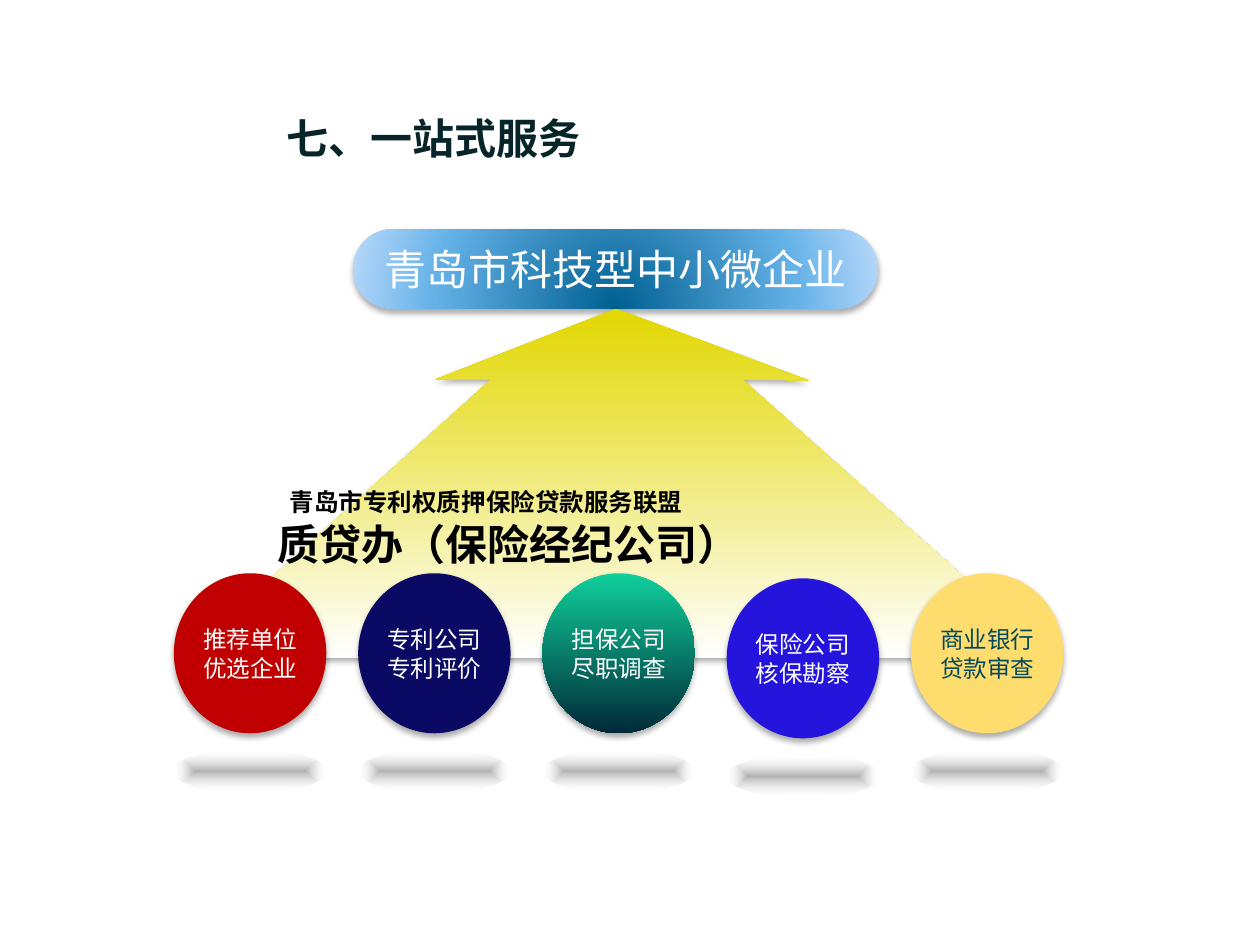
from lxml import etree
from pptx import Presentation
from pptx.dml.color import RGBColor
from pptx.enum.shapes import MSO_SHAPE
from pptx.enum.text import MSO_ANCHOR, PP_ALIGN
from pptx.oxml import parse_xml
from pptx.oxml.ns import nsdecls, qn
from pptx.util import Inches, Pt

ELLIPSE, PILL = MSO_SHAPE.OVAL, MSO_SHAPE.ROUNDED_RECTANGLE
MIDDLE, TOP = MSO_ANCHOR.MIDDLE, MSO_ANCHOR.TOP
CENTER, LEFT = PP_ALIGN.CENTER, PP_ALIGN.LEFT
COLS, ROWS = 100, 75  # slide grid
DOWN = '<a:lin ang="5400000" scaled="0"/>'


def rgb(hex_code):
    return RGBColor.from_string(hex_code)


def focus(kind, l, t, r, b):
    """Gradient that runs towards a focus rectangle, given in percent."""
    sides = zip("ltrb", (l, t, r, b))
    rect = " ".join(f'{k}="{v * 1000}"' for k, v in sides)
    return f'<a:path path="{kind}"><a:fillToRect {rect}/></a:path>'


class Deck:
    font = "Noto Sans CJK SC"

    def __init__(self, width, height):
        self.prs = Presentation()
        self.prs.slide_width, self.prs.slide_height = Inches(width), Inches(height)
        self.s = self.prs.slides.add_slide(self.prs.slide_layouts[5])

    def x(self, cols):
        return round(self.prs.slide_width * cols / COLS)

    def y(self, rows):
        return round(self.prs.slide_height * rows / ROWS)

    def box(self, at):
        left, top, width, height = at
        return self.x(left), self.y(top), self.x(width), self.y(height)

    def paint(self, sp, fill, shadow=True):
        """Fill is a hex string or a pair: stops (percent, colour, alpha), direction."""
        sp.line.fill.background()
        sp.shadow.inherit = False
        if isinstance(fill, str):
            sp.fill.solid()
            sp.fill.fore_color.rgb = rgb(fill)
        else:
            stops, direction = fill
            gs = "".join(
                f'<a:gs pos="{pos * 1000}"><a:srgbClr val="{color}">'
                f'<a:alpha val="{alpha * 1000}"/></a:srgbClr></a:gs>'
                for pos, color, alpha in stops)
            sp.fill.background()
            no_fill = sp._element.spPr.find(qn("a:noFill"))
            no_fill.getparent().replace(no_fill, parse_xml(
                f'<a:gradFill {nsdecls("a")} rotWithShape="1">'
                f"<a:gsLst>{gs}</a:gsLst>{direction}</a:gradFill>"))
        if shadow:
            effects = sp._element.spPr.find(qn("a:effectLst"))
            effects.append(parse_xml(
                f'<a:outerShdw {nsdecls("a")} blurRad="{Pt(3.5)}" dist="{Pt(2.2)}" '
                'dir="5400000" rotWithShape="0"><a:srgbClr val="000000">'
                '<a:alpha val="32000"/></a:srgbClr></a:outerShdw>'))

    def add_lines(self, sp, lines, color, bold=False, align=CENTER, anchor=MIDDLE):
        """Lines are (text, size, line spacing or None, indent in columns)."""
        tf = sp.text_frame
        tf.word_wrap = False
        tf.vertical_anchor = anchor
        tf.margin_left = tf.margin_right = tf.margin_top = tf.margin_bottom = 0
        for i, (text, size, spacing, indent) in enumerate(lines):
            p = tf.add_paragraph() if i else tf.paragraphs[0]
            p.alignment = align
            if spacing:
                p.line_spacing = Pt(spacing)
            if indent:
                p._p.get_or_add_pPr().set("marL", str(self.x(indent)))
            r = p.add_run()
            r.text = text
            r.font.name, r.font.size, r.font.bold = self.font, Pt(size), bold
            r.font.color.rgb = rgb(color)
            etree.SubElement(r._r.rPr, qn("a:ea")).set("typeface", self.font)

    def title(self, at, text, size, color):
        sp = self.s.shapes.title
        sp.left, sp.top, sp.width, sp.height = self.box(at)
        self.add_lines(sp, [(text, size, None, 0)], color, bold=True)

    def shape(self, kind, at, fill, shadow=True):
        sp = self.s.shapes.add_shape(kind, *self.box(at))
        self.paint(sp, fill, shadow)
        return sp

    def outline(self, points, fill):
        points = [(self.x(c), self.y(r)) for c, r in points]
        builder = self.s.shapes.build_freeform(*points[0])
        builder.add_line_segments(points[1:], close=True)
        self.paint(builder.convert_to_shape(), fill)

    def label(self, at, lines, color):
        sp = self.s.shapes.add_textbox(*self.box(at))
        self.add_lines(sp, lines, color, bold=True, align=LEFT, anchor=TOP)


def main():
    deck = Deck(10, 7.5)
    deck.title((19.2, 8.4, 30.4, 5), "七、一站式服务", 24, "072428")

    # Companies served
    blue = [(0, "006091", 100), (68, "64B1E7", 100), (100, "B1D6F9", 100)]
    pill = deck.shape(PILL, (28, 18.2, 41.7, 6.3),
                      (blue, focus("circle", 50, 130, 50, -30)))
    pill.adjustments[0] = 0.5
    deck.add_lines(pill, [("青岛市科技型中小微企业", 24, None, 0)], "FFFFFF")

    # Arrow that widens towards the partners
    deck.outline([(48.9, 24.5), (34.6, 30.1), (39, 30.1), (14.5, 52.2),
                  (83.7, 52.2), (58.9, 30.1), (64.2, 30.2)],
                 ([(0, "E2D700", 100), (100, "FFFFFF", 100)], DOWN))
    deck.label((22, 38.6, 40, 6.5),
               [("青岛市专利权质押保险贷款服务联盟", 14, 17, 1),
                ("质贷办（保险经纪公司）", 24, 30, 0)], "000000")

    # Partners: text, fill, text colour, drop in rows
    green = ([(0, "10CF9B", 100), (100, "002A38", 100)], DOWN)
    partners = [
        (("推荐单位", "优选企业"), "C00000", "FFFFFF", 0),
        (("专利公司", "专利评价"), "0A0A64", "FFFFFF", 0),
        (("担保公司", "尽职调查"), green, "FFFFFF", 0),
        (("保险公司", "核保勘察"), "2514DC", "FFFFFF", 0.4),
        (("商业银行", "贷款审查"), "FFDC6E", "03495C", 0),
    ]
    first, last, width = 13.8, 72.3, 12.1
    step = (last - first) / (len(partners) - 1)
    glow = ([(0, "000000", 30), (100, "FFFFFF", 0)],
            focus("shape", 50, 50, 50, 50))
    for i, (lines, fill, color, drop) in enumerate(partners):
        left = first + i * step
        deck.shape(ELLIPSE, (left, 59.5 + drop, width, 3.4), glow, shadow=False)
        disc = deck.shape(ELLIPSE, (left, 45.5 + drop, width, 12.7), fill)
        deck.add_lines(disc, [(text, 13.5, 16.5, 0) for text in lines], color)

    deck.prs.save("out.pptx")


if __name__ == "__main__":
    main()
